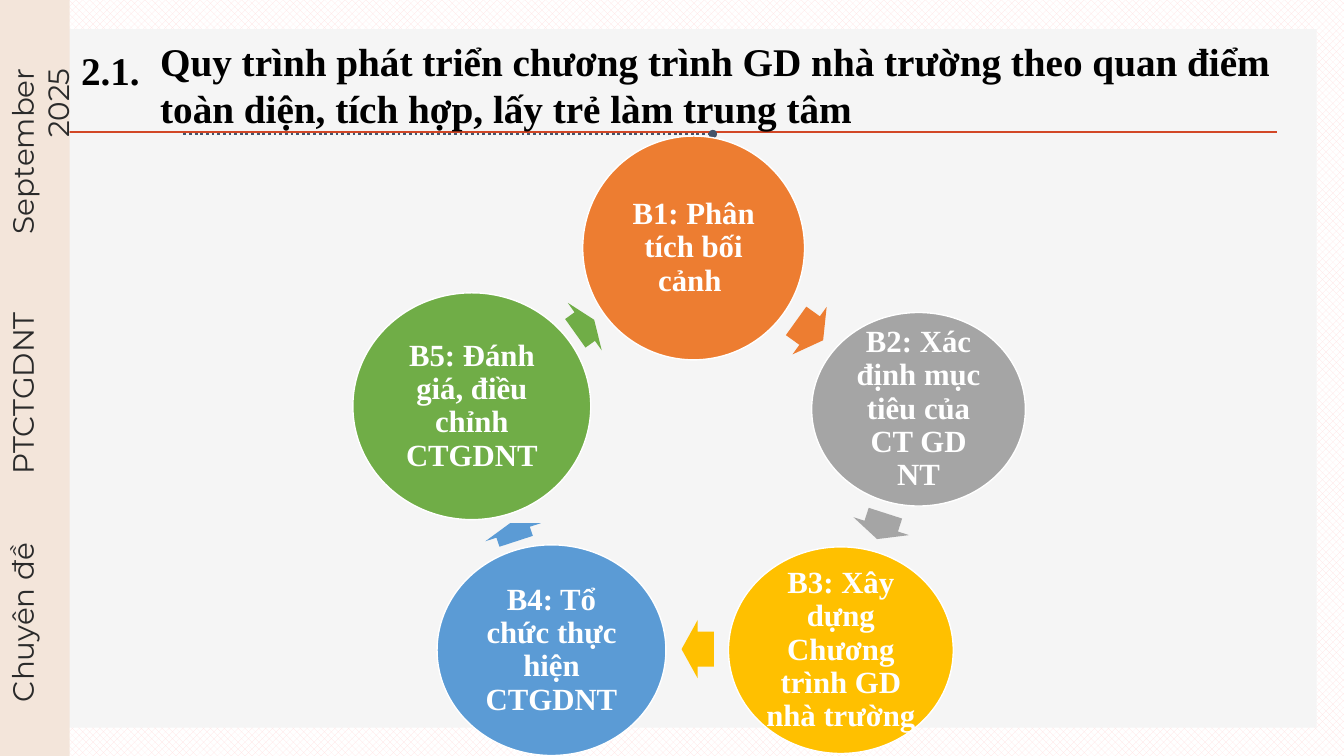
from math import atan2, degrees

from lxml import etree
from pptx import Presentation
from pptx import util as u
from pptx.dml.color import RGBColor
from pptx.enum import dml, shapes, text
from pptx.oxml.ns import qn

SERIF = "Times New Roman"
SANS = "Montserrat"
ALIGN = text.PP_ALIGN

# label, colour, circle centre and size, centre and length of the arrow that follows
STEPS = [
    ("B1: Phân tích bối cảnh ", "ED7D31", (6.88, 2.46), (2.2, 2.22), (8.03, 3.28), 0.33),
    ("B2: Xác định mục tiêu của CT GD NT", "A5A5A5", (9.11, 4.06), (2.12, 1.92), (8.74, 5.22), 0.27),
    ("B3: Xây dựng Chương trình GD nhà trường", "FFC000", (8.34, 6.45), (2.23, 2.05), (6.92, 6.44), 0.32),
    ("B4: Tổ chức thực hiện CTGDNT", "5B9BD5", (5.47, 6.45), (2.27, 2.09), (5.09, 5.28), 0.19),
    ("B5: Đánh giá, điều chỉnh CTGDNT", "70AD47", (4.68, 4.03), (2.36, 2.25), (5.8, 3.24), 0.23),
]


def color(value):
    """Return a colour from a hex string."""
    return RGBColor.from_string(value)


def inches(*values):
    """Return the values as lengths in inches."""
    return [u.Inches(value) for value in values]


def centered(center, size):
    """Return left, top, width and height of a box around a centre."""
    return (center[0] - size[0] / 2, center[1] - size[1] / 2, *size)


def add_run(paragraph, words, font_name, size, value, bold=False):
    """Add one formatted run."""
    run = paragraph.add_run()
    run.text = words
    run.font.name = font_name
    run.font.size = u.Pt(size)
    run.font.bold = bold
    run.font.color.rgb = color(value)


def add_filled(slide, preset, box, fill, line=None):
    """Add a flat preset shape."""
    shape = slide.shapes.add_shape(preset, *inches(*box))
    shape.shadow.inherit = False
    shape.fill.solid()
    shape.fill.fore_color.rgb = color(fill)
    if line:
        shape.line.color.rgb = color(line)
        shape.line.width = u.Pt(1)
    else:
        shape.line.fill.background()
    return shape


def set_margins(frame, margin):
    """Give a text frame equal margins."""
    frame.margin_left = frame.margin_right = u.Inches(margin)
    frame.margin_top = frame.margin_bottom = u.Inches(margin)


def add_text(slide, box, wrap=True):
    """Add a text box and return it."""
    textbox = slide.shapes.add_textbox(*inches(*box))
    textbox.text_frame.word_wrap = wrap
    textbox.text_frame.auto_size = text.MSO_AUTO_SIZE.SHAPE_TO_FIT_TEXT
    return textbox


def add_rule(slide, left, right, top, value):
    """Add a horizontal line without shadow."""
    rule = slide.shapes.add_connector(
        shapes.MSO_CONNECTOR.STRAIGHT, *inches(left, top, right, top))
    rule.line.color.rgb = color(value)
    rule.line.width = u.Pt(2)
    etree.SubElement(rule._element.spPr, qn("a:effectLst"))
    return rule


def add_backdrop(slide, box):
    """Draw the patterned background and the grey panel."""
    fill = slide.background.fill
    fill.patterned()
    fill.pattern = dml.MSO_PATTERN.PERCENT_50
    fill.fore_color.rgb = color("FFE1E1")
    fill.back_color.rgb = color("FFFFFF")
    add_filled(slide, shapes.MSO_SHAPE.RECTANGLE, box, "F5F5F5")


def add_heading(slide, left, top):
    """Draw the numbered heading and the two rules beneath it."""
    add_rule(slide, left - 0.04, left + 11.97, top + 0.99, "D24726")
    dotted = add_rule(slide, left + 1.12, left + 6.37, top + 1.01, "44546A")
    dotted.line.dash_style = dml.MSO_LINE.ROUND_DOT
    etree.SubElement(dotted.line._get_or_add_ln(), qn("a:tailEnd"), type="oval")
    title = add_text(slide, (left + 0.79, top, 11.48, 1.04))
    add_run(title.text_frame.paragraphs[0],
            "Quy trình phát triển chương trình GD nhà trường theo quan điểm "
            "toàn diện, tích hợp, lấy trẻ làm trung tâm", SERIF, 28, "000000", True)
    number = add_text(slide, (left, top + 0.09, 0.79, 0.57), wrap=False)
    paragraph = number.text_frame.paragraphs[0]
    paragraph.alignment = ALIGN.CENTER
    add_run(paragraph, "2.1.", SERIF, 28, "000000", True)


def add_step(slide, label, fill, center, size):
    """Draw one circle of the cycle with its label."""
    circle = add_filled(slide, shapes.MSO_SHAPE.OVAL, centered(center, size), fill, "FFFFFF")
    frame = circle.text_frame
    frame.word_wrap = True
    frame.vertical_anchor = text.MSO_ANCHOR.MIDDLE
    set_margins(frame, 0.03)
    paragraph = frame.paragraphs[0]
    paragraph.alignment = ALIGN.CENTER
    paragraph.line_spacing = 0.9
    add_run(paragraph, label, SERIF, 22, "FFFFFF", True)


def add_cycle(slide, steps):
    """Draw the steps, each with an arrow pointing towards the next one."""
    for index, (label, fill, center, size, middle, length) in enumerate(steps):
        add_step(slide, label, fill, center, size)
        following = steps[(index + 1) % len(steps)][2]
        arrow = add_filled(slide, shapes.MSO_SHAPE.RIGHT_ARROW,
                           centered(middle, (length, 0.58)), fill)
        arrow.adjustments[0] = 0.6
        arrow.adjustments[1] = 0.5
        arrow.rotation = degrees(
            atan2(following[1] - center[1], following[0] - center[0])) % 360


def add_side_band(slide, box):
    """Draw the side band with its upright labels."""
    left, top = box[:2]
    add_filled(slide, shapes.MSO_SHAPE.RECTANGLE, box, "F3E5DA")
    labels = [("Chuyên đề", 5.6, 2.73, ALIGN.LEFT),
              ("September 2025", 1.67, 1.98, ALIGN.RIGHT),
              ("PTCTGDNT", 3.9, 2.07, ALIGN.CENTER)]
    for words, middle, length, alignment in labels:
        label = add_text(slide, centered((left + 0.22, top + middle), (length, 0.35)))
        label.rotation = 270
        set_margins(label.text_frame, 0)
        paragraph = label.text_frame.paragraphs[0]
        paragraph.alignment = alignment
        paragraph.line_spacing = u.Pt(25.2)
        add_run(paragraph, words, SANS, 21, "2A2A2A")


def main():
    """Build and save the slide."""
    presentation = Presentation()
    presentation.slide_width, presentation.slide_height = inches(13.33, 7.5)
    slide = presentation.slides.add_slide(presentation.slide_layouts[6])
    add_backdrop(slide, (0.28, 0.29, 12.78, 6.93))
    add_heading(slide, 0.7, 0.32)
    add_cycle(slide, STEPS)
    add_side_band(slide, (0, 0, 0.69, 7.5))
    presentation.save("out.pptx")


if __name__ == "__main__":
    main()
